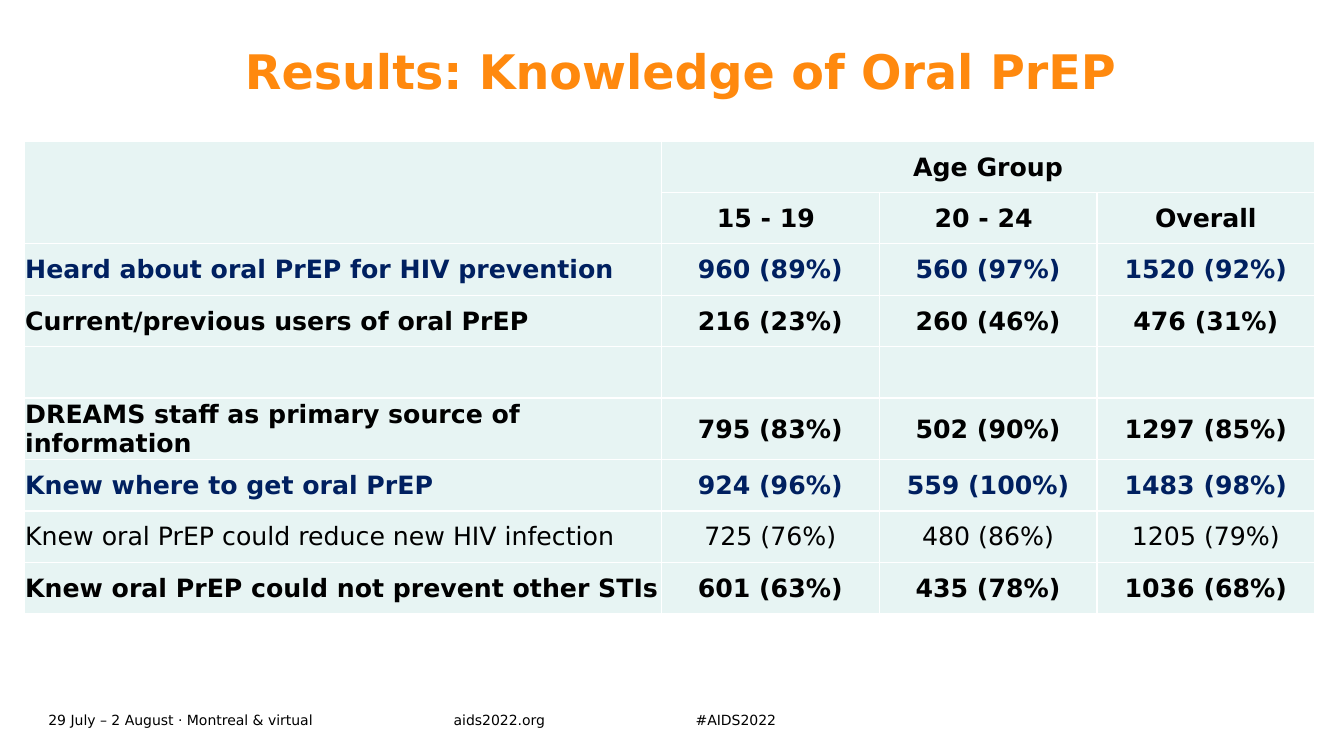
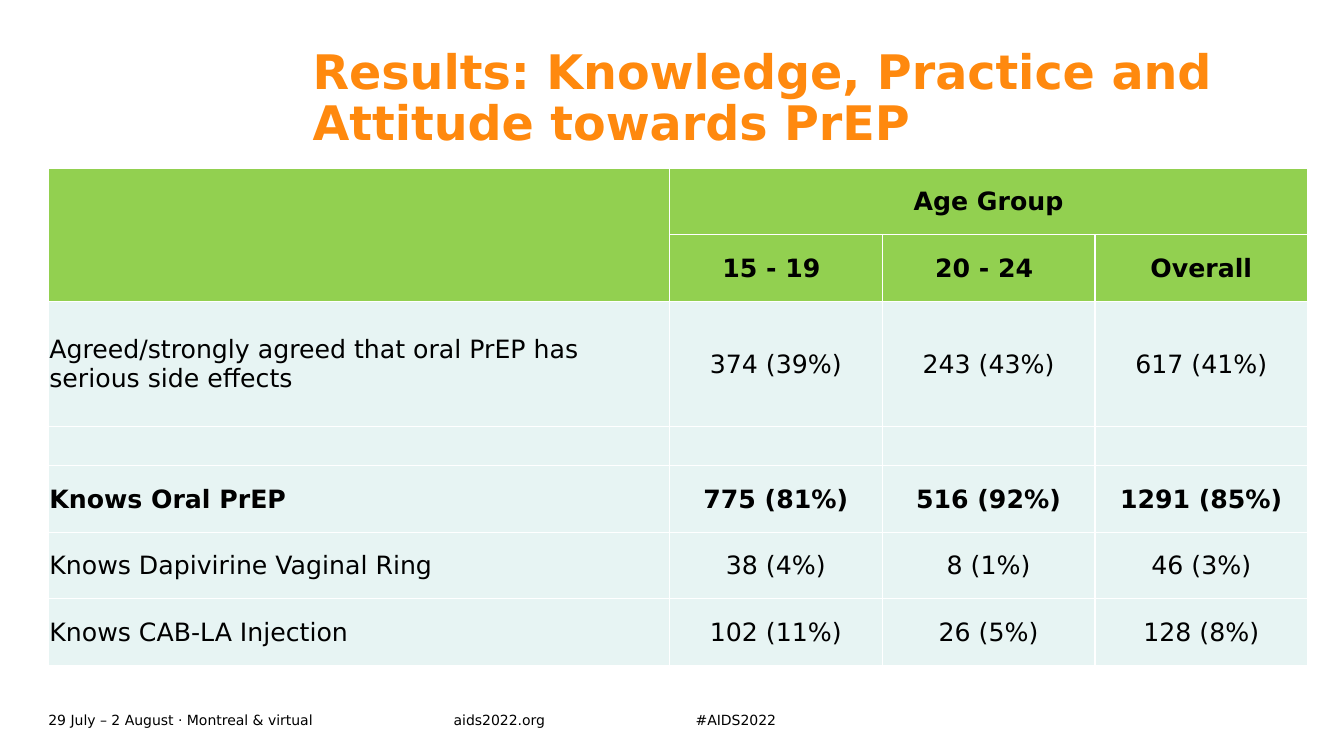
from lxml.etree import SubElement as Sub
from pptx import Presentation
from pptx.dml.color import RGBColor as RGB
from pptx.enum.text import MSO_ANCHOR as Anchor, PP_ALIGN as Align
from pptx.oxml.ns import qn
from pptx.util import Pt

PX = 9144  # EMU in one px, 100 px to the inch
FONT = "DejaVu Sans"
BLACK, NAVY = RGB(0, 0, 0), RGB(0x00, 0x20, 0x60)
ORANGE, WHITE = RGB(0xFF, 0x89, 0x0E), RGB(0xFF, 0xFF, 0xFF)
MINT, GREEN = RGB(0xE7, 0xF4, 0xF3), RGB(0x92, 0xD0, 0x50)

FOOTER = [
    (48, 402, "29 July – 2 August · Montreal & virtual"),
    (450, 193, "aids2022.org"),
    (690, 193, "#AIDS2022"),
]

# Each row: bold, colour, cell texts
HEAD = [
    (True, BLACK, ["", "Age Group", "", ""]),
    (True, BLACK, ["", "15 - 19 ", "20 - 24 ", "Overall"]),
]
GAP = (False, BLACK, [""] * 4)
ORAL = [
    (True, NAVY, ["Heard about oral PrEP for HIV prevention",
                  "960 (89%)", "560 (97%)", "1520 (92%)"]),
    (True, BLACK, ["Current/previous users of oral PrEP",
                   "216 (23%)", "260 (46%)", "476 (31%)"]),
    GAP,
    (True, BLACK, ["DREAMS staff as primary source of information",
                   "795 (83%)", "502 (90%)", "1297 (85%)"]),
    (True, NAVY, ["Knew where to get oral PrEP",
                  "924 (96%)", "559 (100%)", "1483 (98%)"]),
    (False, BLACK, ["Knew oral PrEP could reduce new HIV infection",
                    "725 (76%)", "480 (86%)", "1205 (79%)"]),
    (True, BLACK, ["Knew oral PrEP could not prevent other STIs",
                   "601 (63%)", "435 (78%)", "1036 (68%)"]),
]
VIEWS = [
    (False, BLACK, ["Agreed/strongly agreed that oral PrEP has serious side effects",
                    "374 (39%)", "243 (43%)", "617 (41%)"]),
    GAP,
    (True, BLACK, ["Knows Oral PrEP",
                   "775 (81%)", "516 (92%)", "1291 (85%)"]),
    (False, BLACK, ["Knows Dapivirine Vaginal Ring",
                    "38 (4%)", "8 (1%)", "46 (3%)"]),
    (False, BLACK, ["Knows CAB-LA Injection",
                    "102 (11%)", "26 (5%)", "128 (8%)"]),
]


def style(para, size, color, bold=False):
    font = para.font
    font.name, font.size = FONT, Pt(size)
    font.color.rgb, font.bold = color, bold


def add_text(slide, box, text, size, color, bold=False, anchor=Anchor.MIDDLE):
    frame = slide.shapes.add_textbox(*(n * PX for n in box)).text_frame
    frame.word_wrap = True
    frame.vertical_anchor = anchor
    frame.margin_left = frame.margin_right = 0
    frame.margin_top = frame.margin_bottom = 0
    para = frame.paragraphs[0]
    para.text = text
    style(para, size, color, bold)
    return para


def add_edges(cell):
    props = cell._tc.get_or_add_tcPr()
    for side in ("lnL", "lnR", "lnT", "lnB"):
        line = Sub(props, qn("a:" + side), w=str(Pt(1)))
        fill = Sub(line, qn("a:solidFill"))
        Sub(fill, qn("a:srgbClr"), val=str(WHITE))


def fill_cell(cell, text, align, color, bold, fill):
    add_edges(cell)
    cell.fill.solid()
    cell.fill.fore_color.rgb = fill
    cell.vertical_anchor = Anchor.MIDDLE
    cell.margin_left = cell.margin_right = cell.margin_top = PX
    cell.margin_bottom = 0
    para = cell.text_frame.paragraphs[0]
    para.text = text
    para.alignment = align
    style(para, 18, color, bold)


def add_grid(slide, left, top, cols, highs, body, head_fill):
    rows = HEAD + body
    box = (left, top, sum(cols), sum(highs))
    table = slide.shapes.add_table(
        len(rows), len(cols), *(n * PX for n in box)).table
    table.first_row = table.horz_banding = False
    for col, width in zip(table.columns, cols):
        col.width = width * PX
    for row, high in zip(table.rows, highs):
        row.height = high * PX
    for r, (bold, color, texts) in enumerate(rows):
        fill = head_fill if r < len(HEAD) else MINT
        for c, text in enumerate(texts):
            align = Align.CENTER if c else Align.LEFT
            fill_cell(table.cell(r, c), text, align, color, bold, fill)
    # Header spans
    table.cell(0, 0).merge(table.cell(1, 0))
    table.cell(0, 1).merge(table.cell(0, 3))


def add_slide(deck, title, left):
    slide = deck.slides.add_slide(deck.slide_layouts[6])
    # Footer
    for x, width, text in FOOTER:
        add_text(slide, (x, 702, width, 24), text, 10, BLACK)
    # Title, ending at a shared right edge
    para = add_text(slide, (left, 48, 1285 - left, 134), title, 34, ORANGE,
                    True, Anchor.TOP)
    para.line_spacing = 0.9
    return slide


def main():
    deck = Presentation()
    deck.slide_width, deck.slide_height = 1333 * PX, 750 * PX

    # Knowledge
    slide = add_slide(deck, "Results: Knowledge of Oral PrEP", 243)
    add_grid(slide, 24, 140, [632] + [216] * 3, [51] * 9, ORAL, MINT)

    # Practice and attitude
    slide = add_slide(
        deck, "Results: Knowledge, Practice and Attitude towards PrEP", 310)
    add_grid(slide, 48, 167, [616] + [211] * 3,
             [66, 66, 124, 39, 66, 66, 66], VIEWS, GREEN)

    deck.save("out.pptx")


if __name__ == "__main__":
    main()
